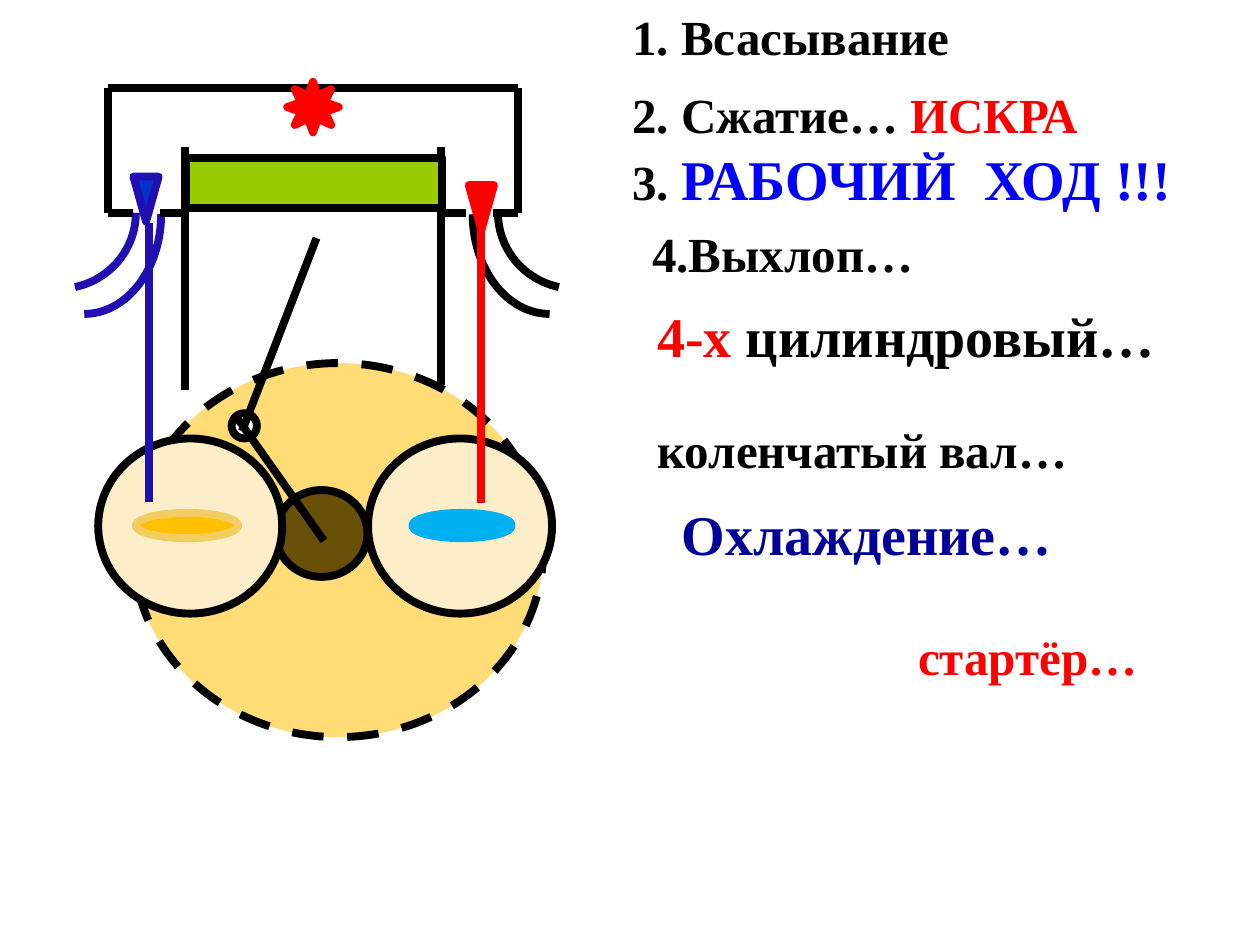
import math

from lxml import etree
from pptx import Presentation
from pptx import util as u
from pptx.dml.color import RGBColor
from pptx.enum import dml, shapes, text
from pptx.oxml import ns

BLACK = RGBColor(0x00, 0x00, 0x00)
WHITE = RGBColor(0xFF, 0xFF, 0xFF)
RED = RGBColor(0xFF, 0x00, 0x00)
BLUE = RGBColor(0x00, 0x00, 0xFF)
NAVY = RGBColor(0x00, 0x00, 0x99)
INTAKE = RGBColor(0x22, 0x0F, 0xB1)
INTAKE_FILL = RGBColor(0x00, 0x33, 0xCC)
AMBER = RGBColor(0xFF, 0xC0, 0x00)
SAND = RGBColor(0xF3, 0xCD, 0x60)
CREAM = RGBColor(0xFB, 0xEE, 0xC9)
BROWN = RGBColor(0x69, 0x50, 0x08)
SKY = RGBColor(0x00, 0xB0, 0xF0)
GREEN = RGBColor(0x99, 0xCC, 0x00)

MIRROR = 12.78
HEAD_TOP, HEAD_BOTTOM = 1.78, 4.29
HEAD_LEFT, HEAD_RIGHT = 2.18, 10.44
WALL_LEFT, WALL_RIGHT = 3.73, 8.89

presentation = Presentation()
presentation.slide_width = u.Cm(25.4)
presentation.slide_height = u.Cm(19.05)
slide = presentation.slides.add_slide(presentation.slide_layouts[6])


def add_text(content, left, top, width, height, size=28, color=BLACK, lead="", lead_size=28, lead_color=BLACK):
    box = slide.shapes.add_textbox(u.Cm(left), u.Cm(top), u.Cm(width), u.Cm(height))
    frame = box.text_frame
    frame.word_wrap = True
    frame.auto_size = text.MSO_AUTO_SIZE.SHAPE_TO_FIT_TEXT
    frame.vertical_anchor = text.MSO_ANCHOR.MIDDLE
    paragraph = frame.paragraphs[0]
    for words, points, shade in ((lead, lead_size, lead_color), (content, size, color)):
        if words:
            run = paragraph.add_run()
            run.text = words
            run.font.name = "Times New Roman"
            run.font.size = u.Pt(points)
            run.font.bold = True
            run.font.color.rgb = shade


def format_shape(shape, line_color, fill_color=None):
    shape.line.color.rgb = line_color
    shape.line.width = u.Pt(4.5)
    if fill_color is not None:
        shape.fill.solid()
        shape.fill.fore_color.rgb = fill_color
    etree.SubElement(shape.element.spPr, ns.qn("a:effectLst"))


flywheel = slide.shapes.add_shape(shapes.MSO_SHAPE.OVAL, u.Cm(2.69), u.Cm(7.32), u.Cm(8.26), u.Cm(7.54))
format_shape(flywheel, BLACK, AMBER)
flywheel.line.dash_style = dml.MSO_LINE.DASH
fill_element = flywheel.element.spPr.find(ns.qn("a:solidFill"))
etree.SubElement(fill_element[0], ns.qn("a:alpha"), val="54000")

wheels = [
    (5.56, 9.88, 1.85, 1.75, BLACK, BROWN),
    (1.98, 8.84, 3.71, 3.53, BLACK, CREAM),
    (7.42, 8.84, 3.71, 3.53, BLACK, CREAM),
    (4.67, 8.33, 0.51, 0.51, BLACK, WHITE),
    (2.74, 10.34, 2.06, 0.51, SAND, AMBER),
    (8.31, 10.34, 2.01, 0.51, SKY, SKY),
]
for left, top, width, height, line_color, fill_color in wheels:
    wheel = slide.shapes.add_shape(shapes.MSO_SHAPE.OVAL, u.Cm(left), u.Cm(top), u.Cm(width), u.Cm(height))
    format_shape(wheel, line_color, fill_color)

ports = [
    (1.19, 4.29, 1.55, 1.53, 78),
    (1.7, 4.32, 1.55, 2.01, 90),
]
for center_x, center_y, radius_x, radius_y, sweep in ports:
    angles = [math.radians(sweep * step / 24) for step in range(25)]
    curve = [(center_x + radius_x * math.cos(a), center_y + radius_y * math.sin(a)) for a in angles]
    mirrored = [(MIRROR - x, y) for x, y in curve]
    for points, color in ((curve, INTAKE), (mirrored, BLACK)):
        points = [(u.Cm(x), u.Cm(y)) for x, y in points]
        builder = slide.shapes.build_freeform(*points[0])
        builder.add_line_segments(points[1:], close=False)
        port = builder.convert_to_shape()
        port.fill.background()
        format_shape(port, color)

lines = [
    (HEAD_LEFT, HEAD_BOTTOM, 2.69, HEAD_BOTTOM, BLACK),
    (9.93, HEAD_BOTTOM, HEAD_RIGHT, HEAD_BOTTOM, BLACK),
    (3.23, HEAD_BOTTOM, WALL_LEFT, HEAD_BOTTOM, BLACK),
    (WALL_RIGHT, HEAD_BOTTOM, 9.4, HEAD_BOTTOM, BLACK),
    (HEAD_LEFT, HEAD_TOP, HEAD_LEFT, HEAD_BOTTOM, BLACK),
    (HEAD_RIGHT, HEAD_TOP, HEAD_RIGHT, HEAD_BOTTOM, BLACK),
    (HEAD_LEFT, HEAD_TOP, HEAD_RIGHT, HEAD_TOP, BLACK),
    (WALL_LEFT, 2.97, WALL_LEFT, 7.87, BLACK),
    (WALL_RIGHT, 2.97, WALL_RIGHT, 7.77, BLACK),
    (6.38, 4.8, 4.88, 8.69, BLACK),
    (4.75, 8.38, 6.53, 10.9, BLACK),
    (3, 4.5, 3, 10.11, INTAKE),
    (9.7, 4.65, 9.7, 10.13, RED),
]
for start_x, start_y, end_x, end_y, color in lines:
    connector = slide.shapes.add_connector(
        shapes.MSO_CONNECTOR.STRAIGHT, u.Cm(start_x), u.Cm(start_y), u.Cm(end_x), u.Cm(end_y))
    format_shape(connector, color)

parts = [
    (shapes.MSO_SHAPE.SUN, 5.79, 1.65, 1.04, 1.02, RED, RED),
    (shapes.MSO_SHAPE.FLOWCHART_MERGE, 2.69, 3.56, 0.51, 0.91, INTAKE, INTAKE_FILL),
    (shapes.MSO_SHAPE.FLOWCHART_MERGE, 9.45, 3.73, 0.51, 0.91, RED, RED),
    (shapes.MSO_SHAPE.RECTANGLE, 3.76, 3.18, 5.16, 1.02, BLACK, GREEN),
]
for kind, left, top, width, height, line_color, fill_color in parts:
    part = slide.shapes.add_shape(kind, u.Cm(left), u.Cm(top), u.Cm(width), u.Cm(height))
    format_shape(part, line_color, fill_color)

add_text("1. Всасывание", 12.5, 0, 12.4, 1.45)
add_text("ИСКРА", 12.5, 1.57, 12.4, 1.45, color=RED, lead="2. Сжатие… ")
add_text("РАБОЧИЙ  ХОД !!!", 12.5, 2.77, 12.4, 1.63, size=32, color=BLUE, lead="3. ")
add_text("4.Выхлоп…", 12.9, 4.37, 6.83, 1.45)
add_text(" цилиндровый…", 13, 5.94, 10.62, 1.63, size=32, lead="4-х", lead_size=32, lead_color=RED)
add_text("коленчатый вал…", 13, 8.33, 9.02, 1.45)
add_text("Охлаждение…", 13.49, 9.93, 8.94, 1.63, size=32, color=NAVY)
add_text("стартёр…", 18.26, 12.5, 5.46, 1.45, color=RED)

presentation.save("out.pptx")
